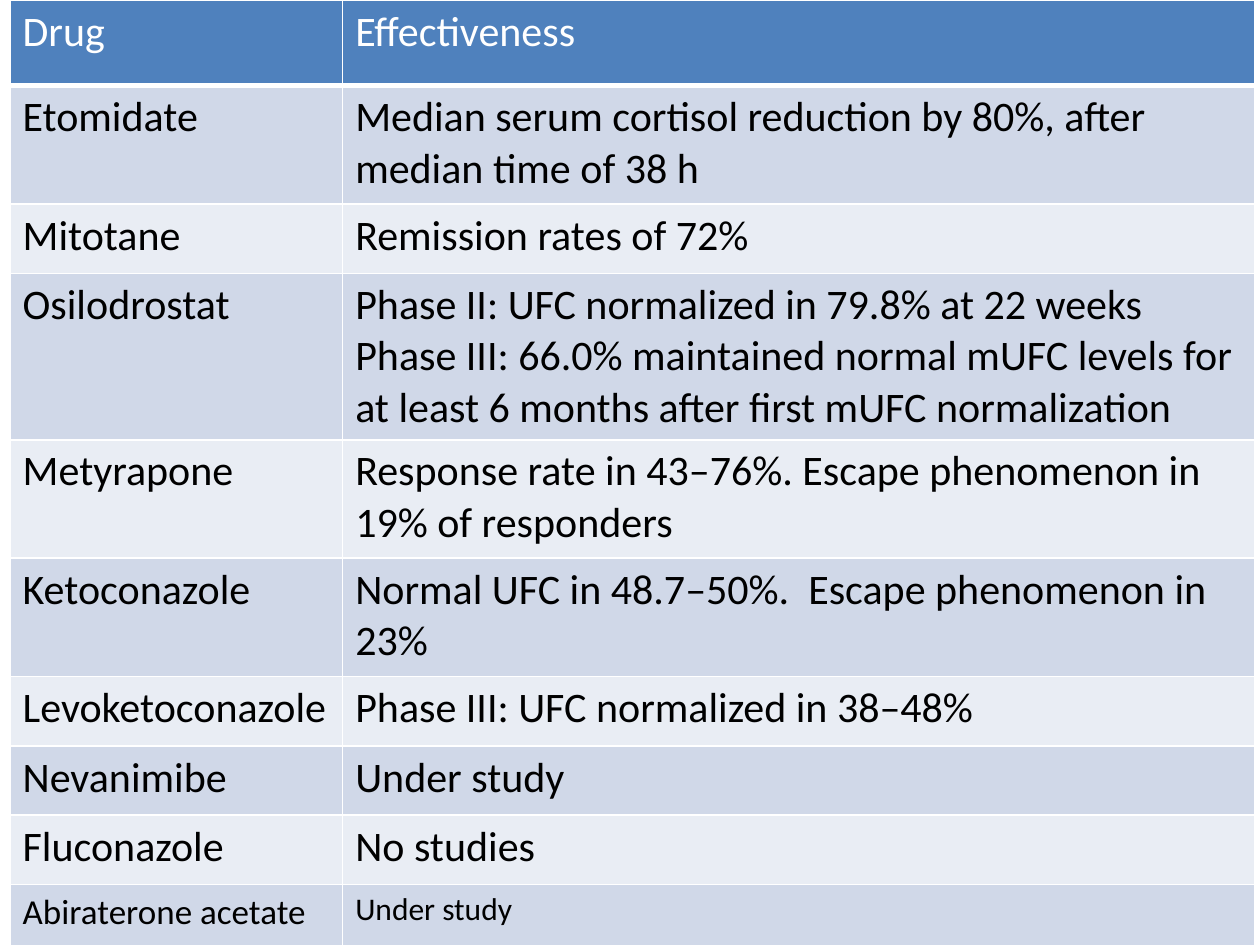
from pptx import Presentation
from pptx import util as u
from pptx.dml.color import RGBColor
from pptx.oxml import parse_xml
from pptx.oxml.ns import nsdecls

WHITE = RGBColor(0xFF, 0xFF, 0xFF)
BLACK = RGBColor(0, 0, 0)
BLUE = RGBColor(0x4F, 0x81, 0xBD)
BANDS = [RGBColor(0xE9, 0xED, 0xF4), RGBColor(0xD0, 0xD8, 0xE8)]

COLS = [2.64, 7.24]
TALL, LOW = 0.94, 0.55

# Row height, drug, effectiveness (one paragraph per line)
ROWS = [
    (0.68, "Drug", "Effectiveness"),
    (TALL, "Etomidate",
     "Median serum cortisol reduction by 80%, after median time of 38 h"),
    (LOW, "Mitotane", "Remission rates of 72%"),
    (TALL, "Osilodrostat",
     "Phase II: UFC normalized in 79.8% at 22 weeks\n"
     "Phase III: 66.0% maintained normal mUFC levels for at least 6 months "
     "after first mUFC normalization"),
    (TALL, "Metyrapone",
     "Response rate in 43–76%. Escape phenomenon in 19% of responders"),
    (TALL, "Ketoconazole",
     "Normal UFC in 48.7–50%.  Escape phenomenon in 23%"),
    (LOW, "Levoketoconazole", "Phase III: UFC normalized in 38–48%"),
    (LOW, "Nevanimibe", "Under study"),
    (LOW, "Fluconazole", "No studies"),
    (LOW, "Abiraterone acetate", "Under study"),
]
LAST = len(ROWS) - 1
SMALL = {(LAST, 0): 20, (LAST, 1): 18}


def edge(cell, widths):
    """Draw the white cell borders; widths are points by side."""
    props = cell._tc.get_or_add_tcPr()
    for i, (side, width) in enumerate(widths.items()):
        props.insert(i, parse_xml(
            f'<a:ln{side} {nsdecls("a")} w="{u.Pt(width)}">'
            f'<a:solidFill><a:srgbClr val="{WHITE}"/></a:solidFill>'
            f'</a:ln{side}>'))


def write(cell, words, size, color):
    """Fill a cell with text in one format."""
    cell.text = words
    form = {"name": "Calibri", "size": u.Pt(size), "bold": False}
    for para in cell.text_frame.paragraphs:
        for run in para.runs:
            for key, value in form.items():
                setattr(run.font, key, value)
            run.font.color.rgb = color


def grid(slide):
    """Build the table of drugs."""
    frame = slide.shapes.add_table(
        len(ROWS), len(COLS), u.Inches(0.08), 0,
        u.Inches(sum(COLS)), u.Inches(sum(row[0] for row in ROWS)))
    table = frame.table
    for col, width in zip(table.columns, COLS):
        col.width = u.Inches(width)
    for r, (height, *words) in enumerate(ROWS):
        table.rows[r].height = u.Inches(height)
        head = r == 0
        for c, line in enumerate(words):
            cell = table.cell(r, c)
            write(cell, line, SMALL.get((r, c), 24), WHITE if head else BLACK)
            cell.fill.solid()
            cell.fill.fore_color.rgb = BLUE if head else BANDS[r % 2]
            # A heavier rule parts the header from the body
            edge(cell, {"L": 1, "R": 1, "T": 3 if r == 1 else 1,
                        "B": 3 if head else 1})


def main():
    deck = Presentation()
    deck.slide_width, deck.slide_height = u.Inches(10), u.Inches(7.5)
    grid(deck.slides.add_slide(deck.slide_layouts[6]))
    deck.save("out.pptx")


if __name__ == "__main__":
    main()
